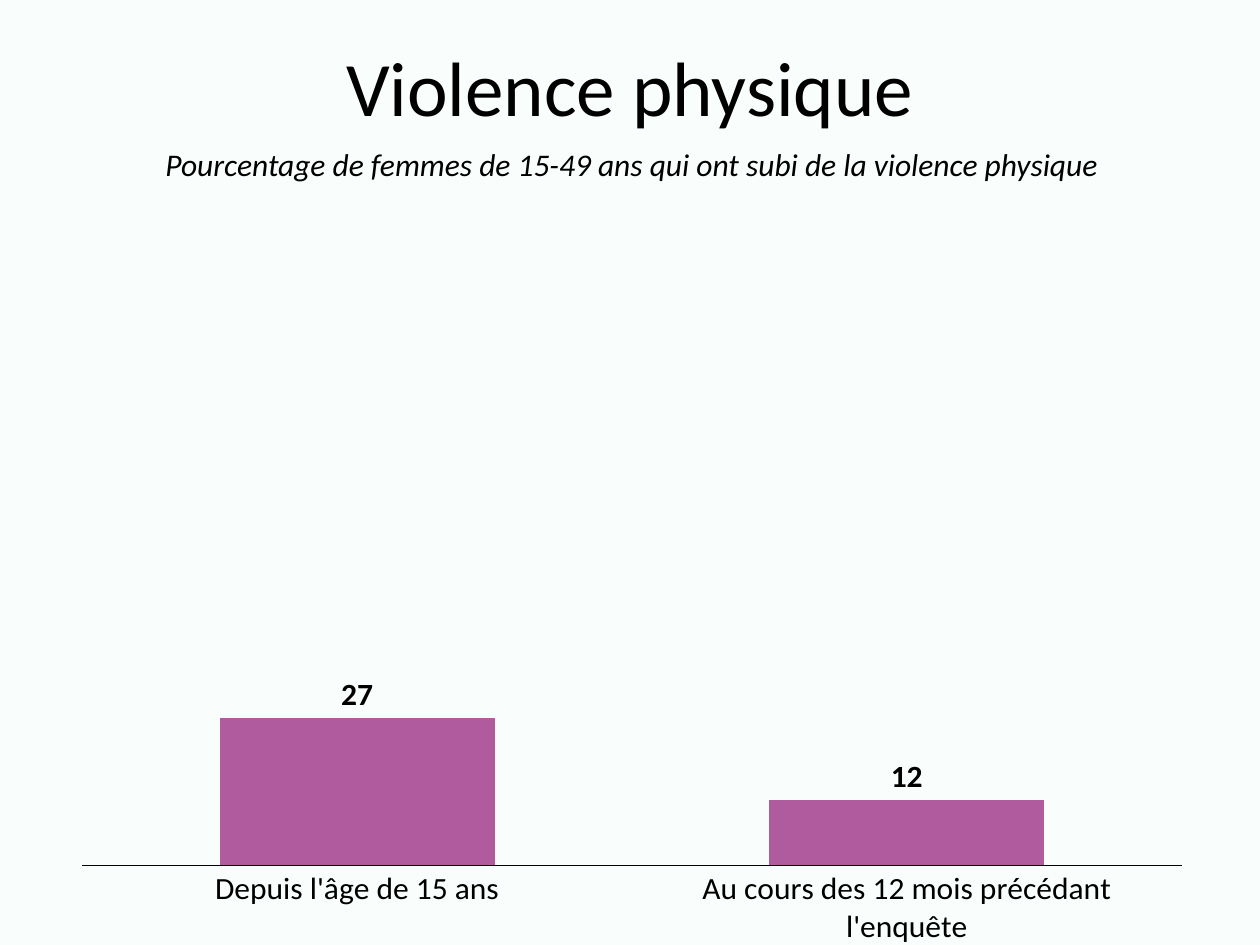
from lxml import etree
from pptx import Presentation
from pptx import util as u
from pptx.chart import data as chart_data
from pptx.dml import color
from pptx.enum import chart as ch, text
from pptx.oxml import ns

SCALE = 914400 / 126
FONT = "Calibri"
INK = "000000"


def px(*lengths):
    return [u.Emu(round(length * SCALE)) for length in lengths]


def rgb(hex_code):
    return color.RGBColor.from_string(hex_code)


def style(font, size, bold=False, italic=False):
    font.name, font.size = FONT, u.Pt(size)
    font.bold, font.italic = bold, italic
    font.color.rgb = rgb(INK)


def add_heading(slide, box, wording, size, italic=False, line_spacing=1.0):
    heading = slide.shapes.add_textbox(*px(*box)).text_frame
    heading.word_wrap = True
    heading.vertical_anchor = text.MSO_ANCHOR.MIDDLE
    heading.text = wording
    line = heading.paragraphs[0]
    line.alignment = text.PP_ALIGN.CENTER
    line.line_spacing = line_spacing
    style(line.runs[0].font, size, italic=italic)


def set_plot_layout(chart, **fractions):
    plot_area = chart._chartSpace.chart.plotArea
    for old in plot_area.findall(ns.qn("c:layout")):
        plot_area.remove(old)
    layout = etree.Element(ns.qn("c:layout"))
    manual = etree.SubElement(layout, ns.qn("c:manualLayout"))
    settings = {"layoutTarget": "inner", "xMode": "edge", "yMode": "edge", **fractions}
    for tag, value in settings.items():
        etree.SubElement(manual, ns.qn(f"c:{tag}")).set("val", str(value))
    plot_area.insert(0, layout)


def add_violence_chart(slide, box):
    rates = chart_data.CategoryChartData()
    rates.categories = ["Depuis l'âge de 15 ans", "Au cours des 12 mois précédant l'enquête"]
    rates.add_series("Series 1", [27, 12])
    chart = slide.shapes.add_chart(ch.XL_CHART_TYPE.COLUMN_CLUSTERED, *px(*box), rates).chart
    chart.has_legend = chart.has_title = False
    style(chart.font, 10)
    set_plot_layout(chart, x=0.017, y=0.138, w=0.966, h=0.771)

    periods = chart.category_axis
    periods.major_tick_mark = periods.minor_tick_mark = ch.XL_TICK_MARK.NONE
    periods.format.line.color.rgb = rgb(INK)
    periods.format.line.width = u.Pt(0.75)
    style(periods.tick_labels.font, 18)

    percent = chart.value_axis
    percent.minimum_scale, percent.maximum_scale = 0, 100
    percent.has_major_gridlines = False
    percent.visible = False

    columns = chart.plots[0]
    columns.gap_width = 100
    columns.vary_by_categories = False
    women = columns.series[0]
    women.format.fill.solid()
    women.format.fill.fore_color.rgb = rgb("AF5B9E")
    labels = women.data_labels
    labels.show_value = True
    labels.position = ch.XL_LABEL_POSITION.OUTSIDE_END
    style(labels.font, 18, bold=True)


def build_violence_slide(deck, box):
    left, top, width, height = box
    slide = deck.slides.add_slide(deck.slide_layouts[6])
    slide.background.fill.solid()
    slide.background.fill.fore_color.rgb = rgb("F9FEFC")
    add_heading(slide, (left, top, width, 183), "Violence physique", 44, line_spacing=0.9)
    add_violence_chart(slide, (left + 63, top + 222, 1138, height - 222))
    add_heading(
        slide,
        (left + 2, top + 138, width, 51),
        "Pourcentage de femmes de 15-49 ans qui ont subi de la violence physique",
        18,
        italic=True,
    )


def main():
    deck = Presentation()
    deck.slide_width, deck.slide_height = px(1260, 945)
    build_violence_slide(deck, (0, 0, 1260, 945))
    deck.save("out.pptx")


if __name__ == "__main__":
    main()
